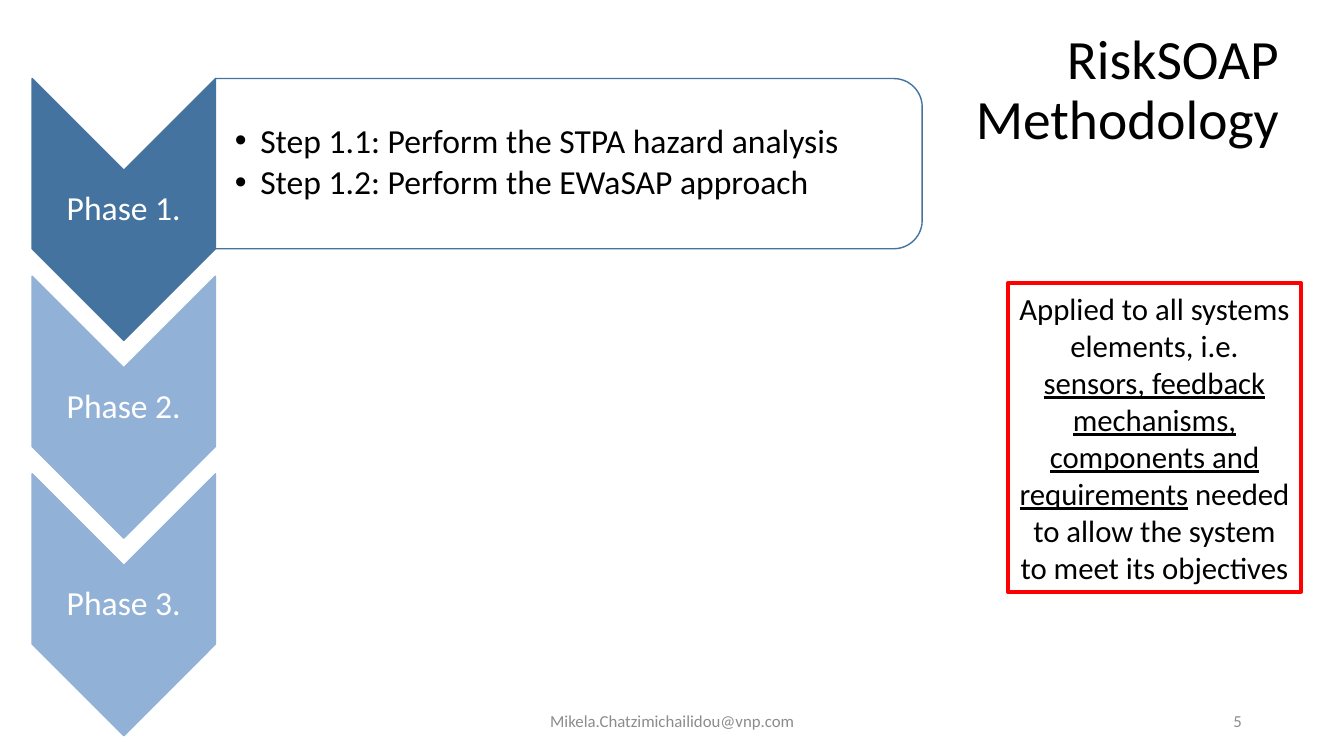
from lxml.etree import SubElement
from pptx import Presentation
from pptx.dml.color import RGBColor
from pptx.enum.shapes import MSO_SHAPE
from pptx.enum.text import MSO_ANCHOR, MSO_AUTO_SIZE, PP_ALIGN
from pptx.oxml.ns import qn
from pptx.util import Cm, Pt

DARK_BLUE, LIGHT_BLUE = "43739E", "91B1D6"
BLACK, WHITE, GREY, RED = "000000", "FFFFFF", "8C8C8C", "FF0000"
CHEVRON_CENTER_X, FIRST_CENTER_Y, PHASE_PITCH = 3.12, 5.28, 4.98
CHEVRON_LENGTH, CHEVRON_WIDTH = 6.6, 4.62


def color(hex_code):
    return RGBColor.from_string(hex_code)


def place(shape, left, top, width, height):
    shape.left, shape.top = Cm(left), Cm(top)
    shape.width, shape.height = Cm(width), Cm(height)


def write(shape, paragraphs, size, ink=BLACK, align=PP_ALIGN.LEFT, spacing=1.0,
          after=0, insets=(0.25, 0.13, 0.25, 0.13), bullet=False):
    frame = shape.text_frame
    frame.word_wrap = True
    frame.auto_size = MSO_AUTO_SIZE.NONE
    frame.vertical_anchor = MSO_ANCHOR.MIDDLE
    frame.margin_left, frame.margin_top, frame.margin_right, frame.margin_bottom = map(Cm, insets)
    for index, pieces in enumerate(paragraphs):
        paragraph = frame.add_paragraph() if index else frame.paragraphs[0]
        paragraph.alignment = align
        paragraph.line_spacing = spacing
        paragraph.space_after = Pt(after)
        if bullet:
            add_bullet(paragraph)
        for words, underlined in pieces:
            for line_number, line in enumerate(words.split("\n")):
                if line_number:
                    paragraph.add_line_break()
                run = paragraph.add_run()
                run.text = line
                run.font.name = "Calibri"
                run.font.size = Pt(size)
                run.font.underline = underlined
                run.font.color.rgb = color(ink)


def add_bullet(paragraph):
    properties = paragraph._p.get_or_add_pPr()
    properties.set("marL", str(Cm(0.64)))
    properties.set("indent", str(-Cm(0.64)))
    SubElement(properties, qn("a:buFont")).set("typeface", "Arial")
    SubElement(properties, qn("a:buChar")).set("char", "•")


def add_text(slide, box, paragraphs, size, **text_format):
    write(slide.shapes.add_textbox(*map(Cm, box)), paragraphs, size, **text_format)


def add_outline(slide, preset, box, line, weight=1, fill=None, rotation=0):
    shape = slide.shapes.add_shape(preset, *map(Cm, box))
    shape.shadow.inherit = False
    shape.rotation = rotation
    if fill:
        shape.fill.solid()
        shape.fill.fore_color.rgb = color(fill)
    else:
        shape.fill.background()
    shape.line.color.rgb = color(line)
    shape.line.width = Pt(weight)
    return shape


def add_phase(slide, index, name, fill):
    center_y = FIRST_CENTER_Y + index * PHASE_PITCH
    add_outline(slide, MSO_SHAPE.CHEVRON,
                (CHEVRON_CENTER_X - CHEVRON_LENGTH / 2, center_y - CHEVRON_WIDTH / 2,
                 CHEVRON_LENGTH, CHEVRON_WIDTH), fill, fill=fill, rotation=90)
    add_text(slide, (CHEVRON_CENTER_X - CHEVRON_WIDTH / 2, center_y - 0.99, CHEVRON_WIDTH, 1.98),
             [[(name, False)]], 24, ink=WHITE, align=PP_ALIGN.CENTER, spacing=0.9,
             insets=(0.05,) * 4)


def add_steps(slide, steps):
    add_outline(slide, MSO_SHAPE.ROUND_2_SAME_RECTANGLE, (12.19, -4.78, 4.29, 17.81),
                DARK_BLUE, fill=WHITE, rotation=90)
    add_text(slide, (5.44, 2.18, 17.6, 3.86), [[(step, False)] for step in steps], 24,
             spacing=0.9, after=3.6, insets=(0.48, 0.05, 0.05, 0.05), bullet=True)


def main():
    deck = Presentation()
    deck.slide_width, deck.slide_height = Cm(33.87), Cm(19.05)
    slide = deck.slides.add_slide(deck.slide_layouts[5])

    title = slide.shapes.title
    place(title, 14.4, 1.3, 18.08, 3.68)
    write(title, [[("RiskSOAP\nMethodology", False)]], 39.6, align=PP_ALIGN.RIGHT,
          spacing=0.9, insets=(0.25, 0.13, 0.25, 1.8))

    for index, fill in enumerate((DARK_BLUE, LIGHT_BLUE, LIGHT_BLUE)):
        add_phase(slide, index, f"Phase {index + 1}.", fill)
    add_steps(slide, ("Step 1.1: Perform the STPA hazard analysis",
                      "Step 1.2: Perform the EWaSAP approach"))

    scope = add_outline(slide, MSO_SHAPE.RECTANGLE, (25.4, 7.14, 7.39, 7.77), RED, weight=3)
    write(scope, [[("Applied to all systems elements, i.e. ", False),
                   ("sensors, feedback mechanisms, components and requirements", True),
                   (" needed to allow the system to meet its objectives", False)]],
          22, align=PP_ALIGN.CENTER)

    add_text(slide, (11.23, 17.65, 11.43, 1.02), [[("Mikela.Chatzimichailidou@vnp.com", False)]],
             12, ink=GREY, align=PP_ALIGN.CENTER)
    add_text(slide, (23.93, 17.65, 7.62, 1.02), [[("5", False)]],
             12, ink=GREY, align=PP_ALIGN.RIGHT)
    deck.save("out.pptx")


if __name__ == "__main__":
    main()
